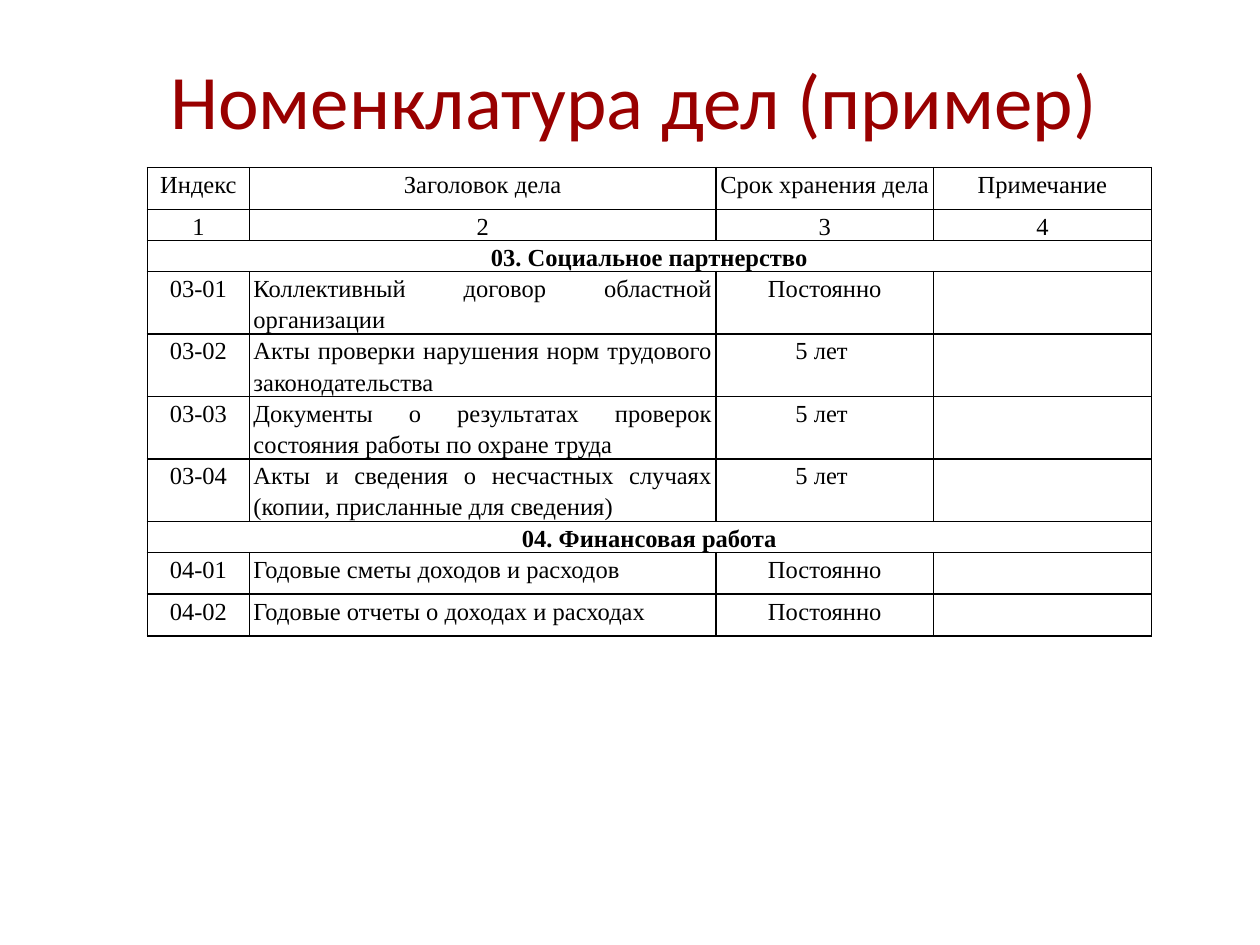
import pptx
import pptx.dml.color
import pptx.enum.text
import pptx.oxml
import pptx.oxml.ns
import pptx.util

Cm = pptx.util.Cm
Pt = pptx.util.Pt
ALIGN = pptx.enum.text.PP_ALIGN

TITLE = "Номенклатура дел (пример)"
TALL, SHORT = 0.84, 0.43
ROWS = [
    (TALL, ["Индекс", "Заголовок дела", "Срок хранения дела", "Примечание"]),
    (SHORT, ["1", "2", "3", "4"]),
    (SHORT, ["03. Социальное партнерство"]),
    (TALL, ["03-01", "Коллективный договор областной организации", "Постоянно", ""]),
    (TALL, ["03-02", "Акты проверки нарушения норм трудового законодательства", "5 лет ", ""]),
    (TALL, ["03-03", "Документы о результатах проверок состояния работы по охране труда", "5 лет ", ""]),
    (1.26, ["03-04", "Акты и сведения о несчастных случаях (копии, присланные для сведения) ", "5 лет ", ""]),
    (SHORT, ["04. Финансовая работа"]),
    (TALL, ["04-01", "Годовые сметы доходов и расходов", "Постоянно", ""]),
    (TALL, ["04-02", "Годовые отчеты о доходах и расходах ", "Постоянно", ""]),
]
COLUMN_WIDTHS = [2.06, 9.4, 4.39, 4.39]
HEADER_ROWS = 2
TITLE_COLUMN = 1
LINE_PITCH = 17.8


def color(value):
    return pptx.dml.color.RGBColor.from_string(value)


def write(paragraph, text, font, size, fill, align, bold=False):
    paragraph.alignment = align
    run = paragraph.add_run()
    run.text = text
    run.font.name = font
    run.font.size = Pt(size)
    run.font.bold = bold
    run.font.color.rgb = color(fill)


def add_borders(cell):
    properties = cell._tc.get_or_add_tcPr()
    for position, side in enumerate(("lnL", "lnR", "lnT", "lnB")):
        border = pptx.oxml.parse_xml(
            f'<a:{side} {pptx.oxml.ns.nsdecls("a")} w="12700"><a:solidFill>'
            f'<a:srgbClr val="000000"/></a:solidFill></a:{side}>'
        )
        properties.insert(position, border)


def add_title(slide):
    box = slide.shapes.add_textbox(Cm(1.99), Cm(0.6), Cm(21.59), Cm(2.77))
    frame = box.text_frame
    frame.word_wrap = True
    frame.vertical_anchor = pptx.enum.text.MSO_ANCHOR.MIDDLE
    write(frame.paragraphs[0], TITLE, "Calibri", 44, "990000", ALIGN.CENTER)


def add_case_table(slide):
    heights = [height for height, texts in ROWS]
    table = slide.shapes.add_table(
        len(ROWS), len(COLUMN_WIDTHS), Cm(2.97), Cm(3.38),
        Cm(sum(COLUMN_WIDTHS)), Cm(sum(heights)),
    ).table
    table.first_row = False
    table.horz_banding = False
    for column, width in zip(table.columns, COLUMN_WIDTHS):
        column.width = Cm(width)
    for row_index, (height, texts) in enumerate(ROWS):
        table.rows[row_index].height = Cm(height)
        is_section = len(texts) == 1
        for column_index in range(len(COLUMN_WIDTHS)):
            cell = table.cell(row_index, column_index)
            cell.margin_left = cell.margin_right = Cm(0.08)
            cell.margin_top = cell.margin_bottom = 0
            cell.fill.background()
            add_borders(cell)
            if column_index >= len(texts):
                continue
            is_case = column_index == TITLE_COLUMN and row_index >= HEADER_ROWS
            paragraph = cell.text_frame.paragraphs[0]
            paragraph.line_spacing = Pt(LINE_PITCH)
            paragraph.space_before = paragraph.space_after = Pt(0)
            write(paragraph, texts[column_index], "Times New Roman", 14, "000000",
                  ALIGN.JUSTIFY if is_case else ALIGN.CENTER, is_section)
        if is_section:
            table.cell(row_index, 0).merge(table.cell(row_index, len(COLUMN_WIDTHS) - 1))


def main():
    presentation = pptx.Presentation()
    presentation.slide_width = Cm(25.4)
    presentation.slide_height = Cm(19.05)
    slide = presentation.slides.add_slide(presentation.slide_layouts[6])
    add_title(slide)
    add_case_table(slide)
    presentation.save("out.pptx")


if __name__ == "__main__":
    main()
